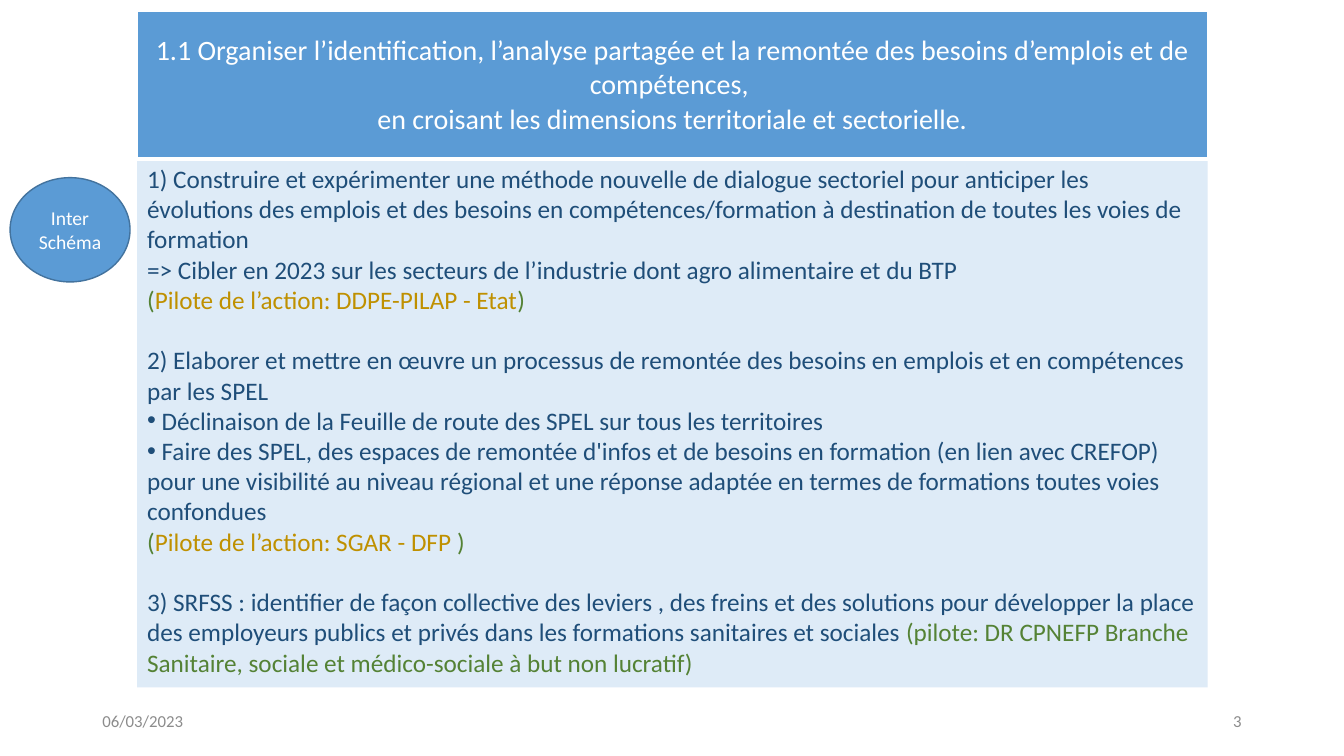
from lxml.etree import SubElement
from pptx import Presentation
from pptx.dml.color import RGBColor
from pptx.enum.shapes import MSO_SHAPE
from pptx.enum.text import MSO_ANCHOR, MSO_AUTO_SIZE, PP_ALIGN
from pptx.oxml.ns import qn
from pptx.util import Pt

WHITE, BLUE, PALE_BLUE, EDGE_BLUE = "FFFFFF", "5B9BD5", "DEEBF7", "43739E"
NAVY, GREEN, GOLD, GREY = "1F4E79", "548235", "BF9000", "8C8C8C"
SECTION_GAP = 21.6
BULLET_INDENT = -22.5


def color(value):
    return RGBColor.from_string(value)


class SlideBuilder:
    """Holds the text style and the current slide; lengths are in points."""

    font_name = "Calibri"

    def __init__(self, slide):
        self.slide = slide

    def fill_text(self, frame, paragraphs, size, anchor=MSO_ANCHOR.MIDDLE, align=PP_ALIGN.LEFT):
        """Each paragraph is a dict: spans as (text, color) pairs, gap, bullet."""
        frame.word_wrap = True
        frame.vertical_anchor = anchor
        for index, content in enumerate(paragraphs):
            para = frame.paragraphs[0] if index == 0 else frame.add_paragraph()
            layout = {"alignment": align, "space_before": Pt(content.get("gap", 0))}
            for name, value in layout.items():
                setattr(para, name, value)
            if content.get("bullet"):
                self.add_bullet(para)
            for text, shade in content["spans"]:
                span = para.add_run()
                span.text = text
                for name, value in {"name": self.font_name, "size": Pt(size)}.items():
                    setattr(span.font, name, value)
                span.font.color.rgb = color(shade)

    def add_bullet(self, para):
        properties = para._p.get_or_add_pPr()
        properties.set("marL", "0")
        properties.set("indent", str(Pt(BULLET_INDENT)))
        SubElement(properties, qn("a:buFont"), typeface="Arial")
        SubElement(properties, qn("a:buChar"), char="•")

    def add_shape(self, kind, place, fill, line=None):
        shape = self.slide.shapes.add_shape(kind, *map(Pt, place))
        shape.shadow.inherit = False
        shape.fill.solid()
        shape.fill.fore_color.rgb = color(fill)
        if line:
            shape.line.color.rgb = color(line)
            shape.line.width = Pt(1)
        else:
            shape.line.fill.background()
        return shape

    def add_text(self, place, text, size, shade, align):
        box = self.slide.shapes.add_textbox(*map(Pt, place))
        self.fill_text(box.text_frame, [{"spans": [(text, shade)]}], size, align=align)

    def add_banner(self, place, lines, size, fill, shade):
        table = self.slide.shapes.add_table(1, 1, *map(Pt, place)).table
        cell = table.cell(0, 0)
        self.fill_text(cell.text_frame, [{"spans": [(line, shade)]} for line in lines],
                       size, align=PP_ALIGN.CENTER)
        cell.vertical_anchor = MSO_ANCHOR.MIDDLE
        # Borders come before the fill in the cell properties
        properties = cell._tc.get_or_add_tcPr()
        for side, width in {"lnL": 1, "lnR": 1, "lnT": 1, "lnB": 3}.items():
            border = SubElement(properties, qn(f"a:{side}"), w=str(Pt(width)))
            paint = SubElement(border, qn("a:solidFill"))
            SubElement(paint, qn("a:srgbClr"), val=WHITE)
        cell.fill.solid()
        cell.fill.fore_color.rgb = color(fill)


def pilot(name, closing=")"):
    return {"spans": [("(", GREEN), (f"Pilote de l’action: {name}", GOLD), (closing, GREEN)]}


def main():
    deck = Presentation()
    deck.slide_width, deck.slide_height = Pt(960), Pt(540)
    page = SlideBuilder(deck.slides.add_slide(deck.slide_layouts[6]))

    # Actions panel
    actions = [
        {"spans": [("1) Construire et expérimenter une méthode nouvelle de dialogue sectoriel "
                    "pour anticiper les évolutions des emplois et des besoins en "
                    "compétences/formation à destination de toutes les voies de formation", NAVY)]},
        {"spans": [("=> Cibler en 2023 sur les secteurs de l’industrie dont agro alimentaire "
                    "et du BTP", NAVY)]},
        pilot("DDPE-PILAP - Etat"),
        {"gap": SECTION_GAP,
         "spans": [("2) Elaborer et mettre en œuvre un processus de remontée des besoins en "
                    "emplois et en compétences par les SPEL", NAVY)]},
        {"bullet": True,
         "spans": [(" Déclinaison de la Feuille de route des SPEL sur tous les territoires", NAVY)]},
        {"bullet": True,
         "spans": [(" Faire des SPEL, des espaces de remontée d'infos et de besoins en formation "
                    "(en lien avec CREFOP) pour une visibilité au niveau régional et une réponse "
                    "adaptée en termes de formations toutes voies confondues", NAVY)]},
        pilot("SGAR - DFP", " )"),
        {"gap": SECTION_GAP,
         "spans": [("3) SRFSS : identifier de façon collective des leviers , des freins et des "
                    "solutions pour développer la place des employeurs publics et privés dans "
                    "les formations sanitaires et sociales ", NAVY),
                   ("(pilote: DR CPNEFP Branche Sanitaire, sociale et médico-sociale "
                    "à but non lucratif)", GREEN)]},
    ]
    panel = page.add_shape(MSO_SHAPE.RECTANGLE, (98, 113, 764.6, 378), PALE_BLUE)
    page.fill_text(panel.text_frame, actions, 18, anchor=MSO_ANCHOR.TOP)
    panel.text_frame.auto_size = MSO_AUTO_SIZE.SHAPE_TO_FIT_TEXT

    # Footer
    page.add_text((678, 500.5, 216, 28.8), "3", 12, GREY, PP_ALIGN.RIGHT)
    page.add_text((66, 500.5, 216, 28.8), "06/03/2023", 12, GREY, PP_ALIGN.LEFT)

    # Heading banner
    page.add_banner((98, 8, 764.6, 105.8), [
        "1.1 Organiser l’identification, l’analyse partagée et la remontée des besoins "
        "d’emplois et de compétences, ",
        "en croisant les dimensions territoriale et sectorielle.",
    ], 20, BLUE, WHITE)

    # Scheme badge
    badge = page.add_shape(MSO_SHAPE.OVAL, (7.2, 126.9, 85.7, 74.5), BLUE, EDGE_BLUE)
    page.fill_text(badge.text_frame, [{"spans": [(word, WHITE)]} for word in ("Inter", "Schéma")],
                   14, align=PP_ALIGN.CENTER)

    deck.save("out.pptx")


if __name__ == "__main__":
    main()
